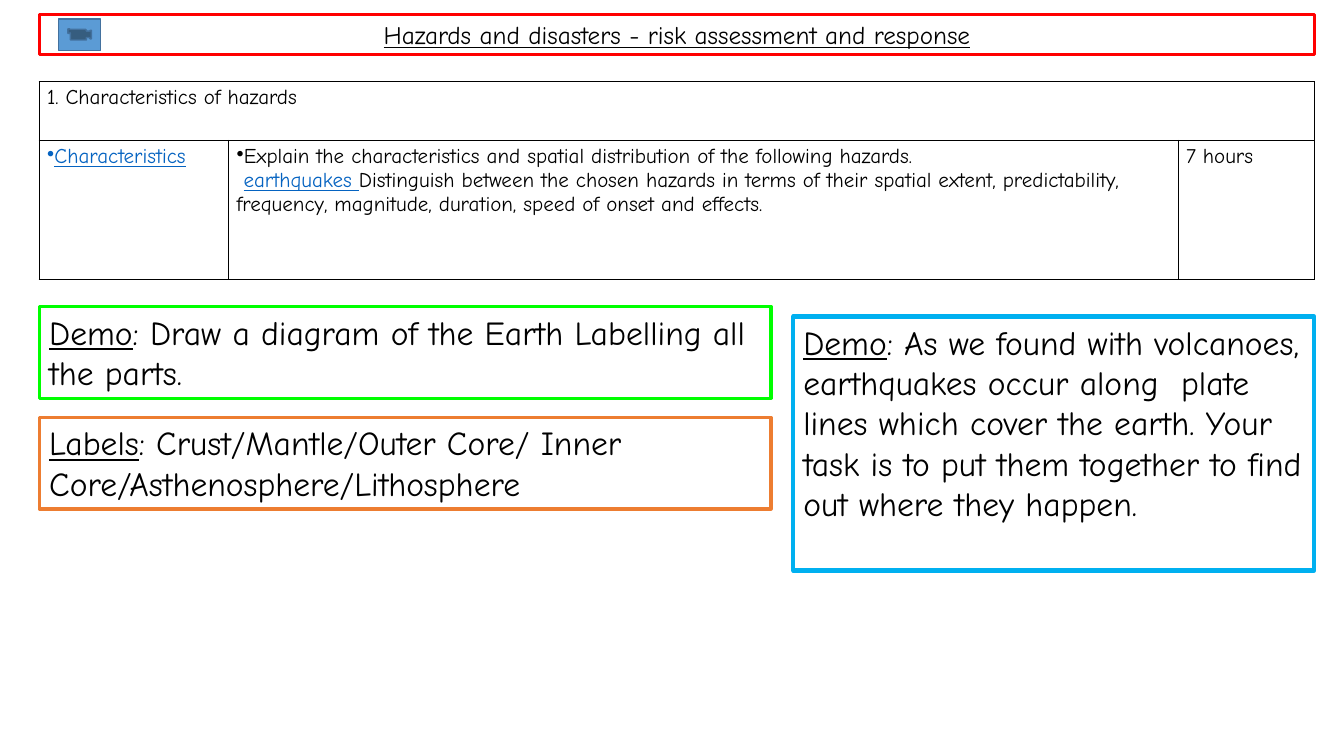
"""Build the lesson slide on hazards and disasters with its syllabus table and tasks."""
import pptx
import pptx.dml.color
import pptx.enum.shapes
import pptx.enum.text
import pptx.oxml
import pptx.oxml.ns
import pptx.util

Pt = pptx.util.Pt
RGBColor = pptx.dml.color.RGBColor
MSO_SHAPE = pptx.enum.shapes.MSO_SHAPE
PP_ALIGN = pptx.enum.text.PP_ALIGN

FONT = "Comic Neue"
BLACK = RGBColor(0x00, 0x00, 0x00)
WHITE = RGBColor(0xFF, 0xFF, 0xFF)
RED = RGBColor(0xFF, 0x00, 0x00)
GREEN = RGBColor(0x00, 0xFF, 0x00)
SKY = RGBColor(0x00, 0xB0, 0xF0)
ORANGE = RGBColor(0xED, 0x7D, 0x31)
LINK = RGBColor(0x05, 0x63, 0xC1)
BUTTON_FILL = RGBColor(0x5B, 0x9B, 0xD5)
BUTTON_LINE = RGBColor(0x43, 0x71, 0x9E)

LEFT, WIDTH = 28.1, 910.8
TASK_WIDTH, TASK_HEIGHT = 522.7, 65.5
PLATES_WIDTH = 372.2

TITLE = "Hazards and disasters - risk assessment and response"
BOXES = [
    ((LEFT, 10.1, WIDTH, 28.8), RED, 2.25, 18, PP_ALIGN.CENTER, TITLE, ""),
    ((LEFT, 218.9, TASK_WIDTH, TASK_HEIGHT), GREEN, 2.25, 24, PP_ALIGN.LEFT,
     "Demo", ": Draw a diagram of the Earth Labelling all the parts."),
    ((LEFT, 298.1, TASK_WIDTH, TASK_HEIGHT), ORANGE, 2.25, 24, PP_ALIGN.LEFT,
     "Labels", ": Crust/Mantle/Outer Core/ Inner Core/Asthenosphere/Lithosphere"),
    ((LEFT + WIDTH - PLATES_WIDTH, 226.1, PLATES_WIDTH, 181.4), SKY, 3, 24, PP_ALIGN.LEFT,
     "Demo", ": As we found with volcanoes, earthquakes occur along  plate lines which cover "
     "the earth. Your task is to put them together to find out where they happen."),
]

SYLLABUS_TOP = 58.3
COLUMNS = [135.4, 678.2, 97.2]
ROWS = [42, 99.4]
SYLLABUS = {
    (0, 0): (False, [("1. Characteristics of hazards", False)]),
    (1, 0): (True, [("Characteristics", True)]),
    (1, 1): (True, [
        ("Explain the characteristics and spatial distribution of the following hazards.", False),
        ("\n", False),
        (" ", False),
        ("earthquakes ", True),
        ("Distinguish between the chosen hazards in terms of their spatial extent, "
         "predictability, frequency, magnitude, duration, speed of onset and effects.", False),
    ]),
    (1, 2): (False, [("7 hours", False)]),
}
BUTTON = (41.8, 13.7, 30.2, 22.3)


def style_font(paragraph, size):
    paragraph.font.name = FONT
    paragraph.font.size = Pt(size)


def add_run(paragraph, text, color, underline):
    run = paragraph.add_run()
    run.text = text
    run.font.color.rgb = color
    run.font.underline = underline


def add_box(slide, place, color, weight, size, align, heading, body):
    box = slide.shapes.add_textbox(*map(Pt, place))
    box.line.color.rgb = color
    box.line.width = Pt(weight)
    box.text_frame.word_wrap = True
    paragraph = box.text_frame.paragraphs[0]
    paragraph.alignment = align
    style_font(paragraph, size)
    add_run(paragraph, heading, BLACK, True)
    if body:
        add_run(paragraph, body, BLACK, False)


def frame_cell(cell):
    cell.margin_left = cell.margin_right = Pt(5.5)
    cell.margin_top = cell.margin_bottom = Pt(2.9)
    properties = cell._tc.get_or_add_tcPr()
    for side in ("lnL", "lnR", "lnT", "lnB"):
        properties.append(pptx.oxml.parse_xml(
            f'<a:{side} {pptx.oxml.ns.nsdecls("a")} w="{Pt(1)}"><a:solidFill>'
            f'<a:srgbClr val="{BLACK}"/></a:solidFill></a:{side}>'))
    cell.fill.solid()
    cell.fill.fore_color.rgb = WHITE


def add_bullet(paragraph):
    properties = paragraph._p.get_or_add_pPr()
    properties.set("marL", "0")
    properties.set("indent", "0")
    properties.insert(0, pptx.oxml.parse_xml(
        f'<a:buChar {pptx.oxml.ns.nsdecls("a")} char="•"/>'))


def add_syllabus(slide):
    table = slide.shapes.add_table(
        len(ROWS), len(COLUMNS), Pt(LEFT), Pt(SYLLABUS_TOP), Pt(WIDTH), Pt(sum(ROWS))).table
    table.first_row = table.horz_banding = False
    for column, width in zip(table.columns, COLUMNS):
        column.width = Pt(width)
    for row, height in zip(table.rows, ROWS):
        row.height = Pt(height)
    for cell in table.iter_cells():
        frame_cell(cell)
    table.cell(0, 0).merge(table.cell(0, len(COLUMNS) - 1))
    for position, (bulleted, pieces) in SYLLABUS.items():
        paragraph = table.cell(*position).text_frame.paragraphs[0]
        style_font(paragraph, 15)
        if bulleted:
            add_bullet(paragraph)
        for text, linked in pieces:
            if text == "\n":
                paragraph.add_line_break()
            else:
                add_run(paragraph, text, LINK if linked else BLACK, linked)


def add_movie_button(slide):
    button = slide.shapes.add_shape(MSO_SHAPE.ACTION_BUTTON_MOVIE, *map(Pt, BUTTON))
    button.shadow.inherit = False
    button.fill.solid()
    button.fill.fore_color.rgb = BUTTON_FILL
    button.line.color.rgb = BUTTON_LINE
    button.line.width = Pt(1)


def main():
    presentation = pptx.Presentation()
    presentation.slide_width, presentation.slide_height = Pt(960), Pt(540)
    slide = presentation.slides.add_slide(presentation.slide_layouts[6])
    for box in BOXES:
        add_box(slide, *box)
    add_syllabus(slide)
    add_movie_button(slide)
    presentation.save("out.pptx")


if __name__ == "__main__":
    main()
